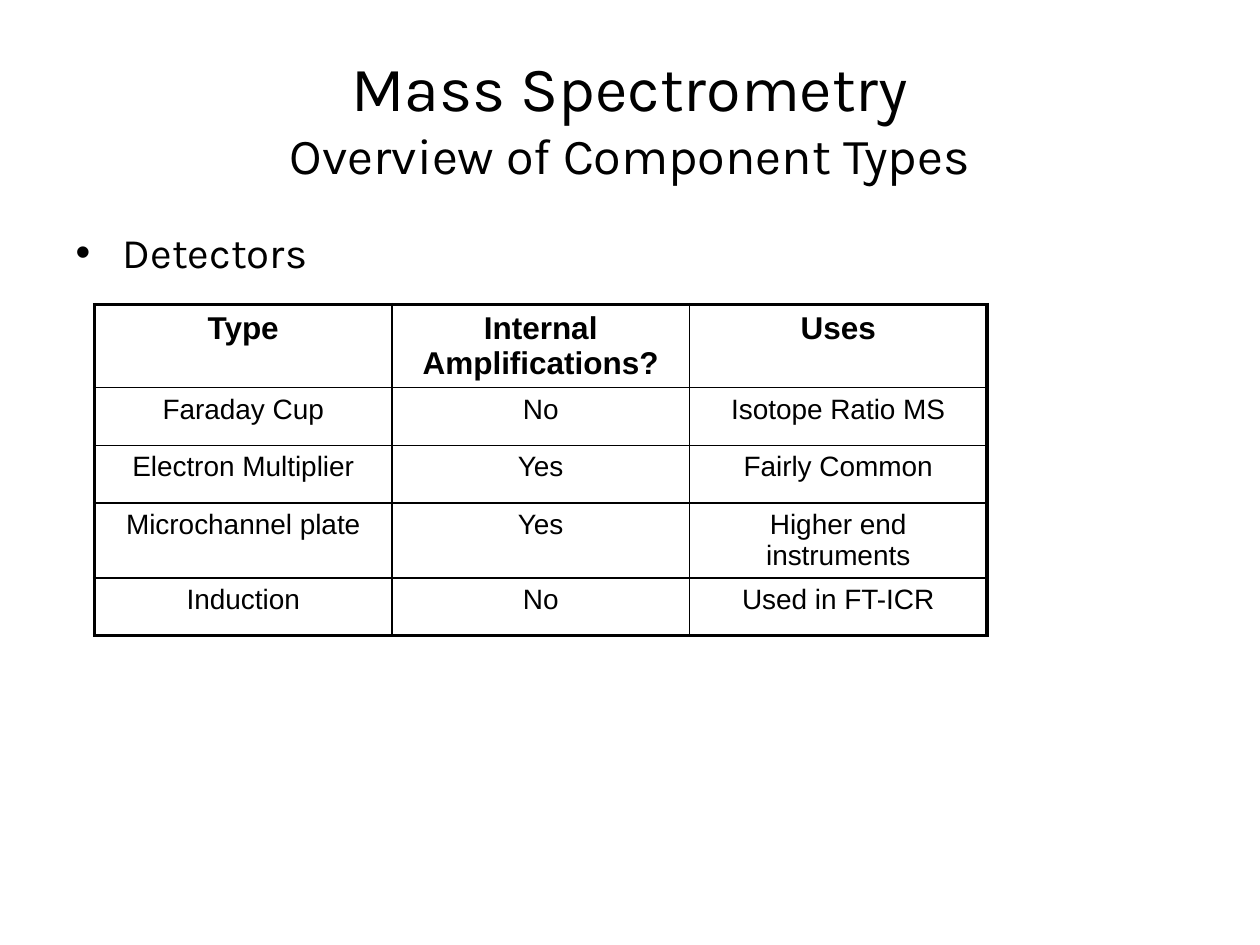
"""Build the slide on mass spectrometry detectors."""
from lxml import etree
from pptx import Presentation
from pptx.dml.color import RGBColor
from pptx.enum import text
from pptx.oxml import ns
from pptx.util import Pt

HEADING = [("Mass Spectrometry", 36), ("Overview of Component Types", 28.8)]
TOPIC = "Detectors"
DETECTORS = [
    ("Type", "Internal Amplifications?", "Uses"),
    ("Faraday Cup", "No", "Isotope Ratio MS"),
    ("Electron Multiplier", "Yes", "Fairly Common"),
    ("Microchannel plate", "Yes", "Higher end instruments"),
    ("Induction", "No", "Used in FT-ICR"),
]
COLORS = {"ink": "000000", "paper": "FFFFFF"}
COLUMN_WIDTH = 170
ROW_HEIGHTS = [37.5] + [33] * 4
INNER, OUTER = 1, 2.25


def place(item, left, top, width, height):
    item.left, item.top, item.width, item.height = map(Pt, (left, top, width, height))


def add_run(paragraph, words, size, font="Karla", bold=False):
    run = paragraph.add_run()
    run.text = words
    run.font.name, run.font.size, run.font.bold = font, Pt(size), bold
    run.font.color.rgb = RGBColor.from_string(COLORS["ink"])


def set_borders(cell, widths):
    properties = cell._tc.get_or_add_tcPr()
    for index, (side, width) in enumerate(widths.items()):
        line = etree.Element(ns.qn(f"a:ln{side}"), w=str(Pt(width)))
        fill = etree.SubElement(line, ns.qn("a:solidFill"))
        etree.SubElement(fill, ns.qn("a:srgbClr"), val=COLORS["ink"])
        properties.insert(index, line)


def add_detectors(slide):
    last_row, last_column = len(DETECTORS) - 1, len(DETECTORS[0]) - 1
    table = slide.shapes.add_table(
        last_row + 1, last_column + 1, Pt(54), Pt(174),
        Pt(COLUMN_WIDTH * (last_column + 1)), Pt(sum(ROW_HEIGHTS))).table
    table.horz_banding = False
    for column in table.columns:
        column.width = Pt(COLUMN_WIDTH)
    for r, (entries, height) in enumerate(zip(DETECTORS, ROW_HEIGHTS)):
        table.rows[r].height = Pt(height)
        for c, entry in enumerate(entries):
            cell = table.cell(r, c)
            cell.fill.background()
            paragraph = cell.text_frame.paragraphs[0]
            paragraph.alignment = text.PP_ALIGN.CENTER
            add_run(paragraph, entry, 16 if r else 18, "Arial", bold=r == 0)
            edges = {"L": c == 0, "R": c == last_column, "T": r == 0, "B": r == last_row}
            set_borders(cell, {side: OUTER if outer else INNER for side, outer in edges.items()})


def main():
    deck = Presentation()
    deck.slide_width, deck.slide_height = Pt(720), Pt(540)
    slide = deck.slides.add_slide(deck.slide_layouts[1])
    slide.background.fill.solid()
    slide.background.fill.fore_color.rgb = RGBColor.from_string(COLORS["paper"])

    heading, topic = slide.placeholders
    place(heading, 36, 21.6, 648, 90)
    heading.text_frame.vertical_anchor = text.MSO_ANCHOR.MIDDLE
    heading_line = heading.text_frame.paragraphs[0]
    heading_line.alignment = text.PP_ALIGN.CENTER
    for index, (words, size) in enumerate(HEADING):
        if index:
            heading_line.add_line_break()
        add_run(heading_line, words, size)

    place(topic, 36, 126, 648, 356.4)
    add_run(topic.text_frame.paragraphs[0], TOPIC, 24)
    add_detectors(slide)
    deck.save("out.pptx")


if __name__ == "__main__":
    main()
